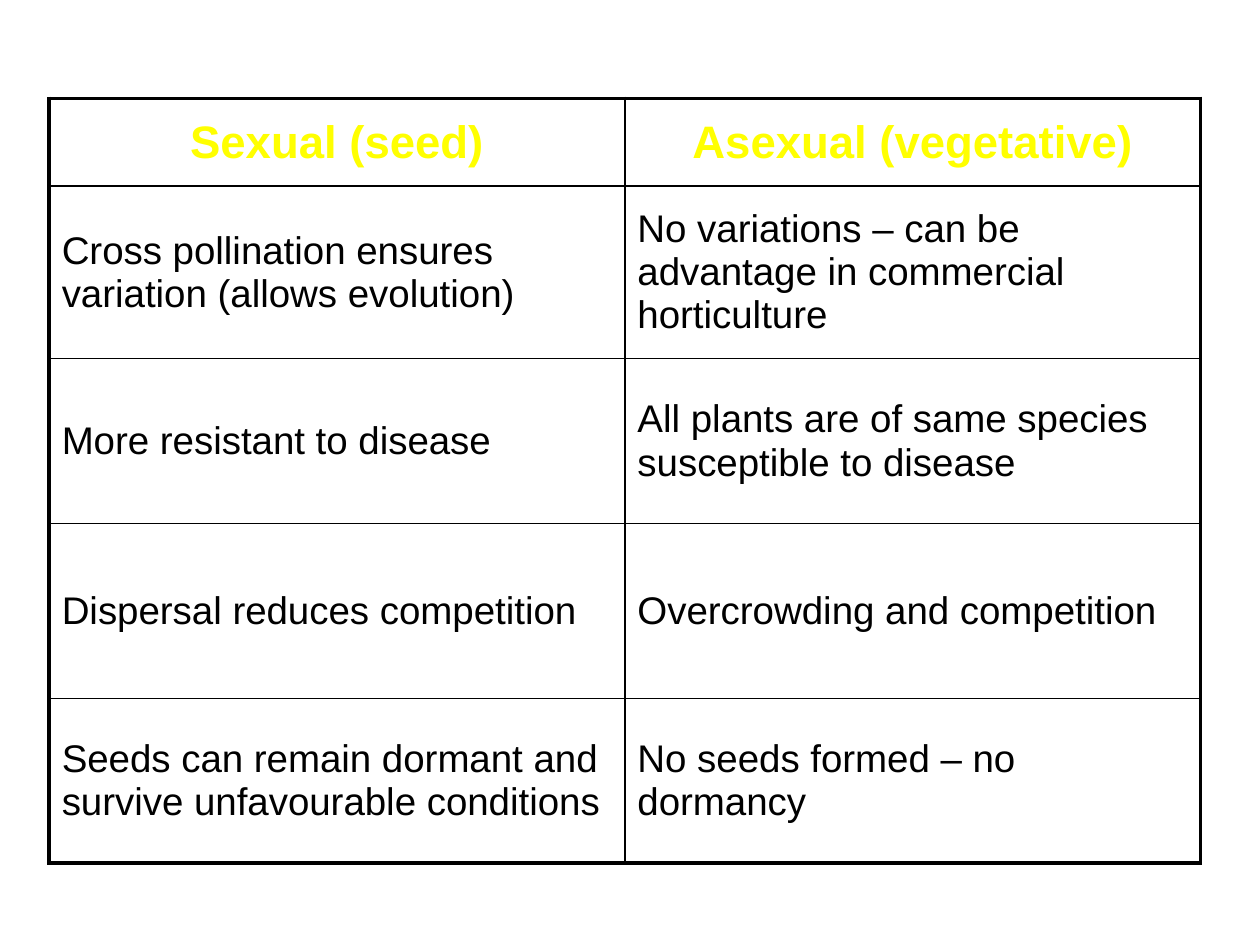
from pptx import Presentation
from pptx.dml.color import RGBColor
from pptx.enum.text import MSO_ANCHOR, PP_ALIGN
from pptx.oxml import parse_xml
from pptx.oxml.ns import nsdecls
from pptx.util import Pt

BLACK = RGBColor(0x00, 0x00, 0x00)
YELLOW = RGBColor(0xFF, 0xFF, 0x00)
OUTER, INNER = 2.25, 1

COMPARISON = [
    ("Sexual (seed)", "Asexual (vegetative)"),
    ("Cross pollination ensures variation (allows evolution)",
     "No variations – can be advantage in commercial horticulture"),
    ("More resistant to disease",
     "All plants are of same species susceptible to disease"),
    ("Dispersal reduces competition", "Overcrowding and competition"),
    ("Seeds can remain dormant and survive unfavourable conditions",
     "No seeds formed – no dormancy"),
]
ROW_HEIGHTS = [50.2, 98.6, 94.2, 100, 94]
COLUMN_WIDTH = 329


def add_border(cell, side, width):
    cell._tc.get_or_add_tcPr().append(parse_xml(
        f'<a:{side} {nsdecls("a")} w="{Pt(width)}"><a:solidFill>'
        f'<a:srgbClr val="{BLACK}"/></a:solidFill></a:{side}>'))


deck = Presentation()
deck.slide_width, deck.slide_height = Pt(720), Pt(540)
page = deck.slides.add_slide(deck.slide_layouts[6])

# Comparison table
row_count, column_count = len(COMPARISON), len(COMPARISON[0])
table = page.shapes.add_table(
    row_count, column_count, Pt(28.1), Pt(56.2),
    Pt(COLUMN_WIDTH * column_count), Pt(sum(ROW_HEIGHTS))).table
table.horz_banding = False
table.first_row = False
for column in table.columns:
    column.width = Pt(COLUMN_WIDTH)

for row_index, texts in enumerate(COMPARISON):
    table.rows[row_index].height = Pt(ROW_HEIGHTS[row_index])
    is_header = row_index == 0
    for column_index, text in enumerate(texts):
        cell = table.cell(row_index, column_index)

        # Thick frame outside, thin rules inside
        on_frame = {
            "lnL": column_index == 0,
            "lnR": column_index == column_count - 1,
            "lnT": is_header,
            "lnB": row_index == row_count - 1,
        }
        for side, outside in on_frame.items():
            add_border(cell, side, OUTER if outside else INNER)
        cell.fill.background()

        # Text
        cell.vertical_anchor = MSO_ANCHOR.MIDDLE
        cell.text_frame.text = text
        para = cell.text_frame.paragraphs[0]
        para.alignment = PP_ALIGN.CENTER if is_header else PP_ALIGN.LEFT
        font = para.runs[0].font
        font.name = "Arial"
        font.size = Pt(26 if is_header else 22)
        font.bold = is_header
        font.color.rgb = YELLOW if is_header else BLACK

deck.save("out.pptx")
